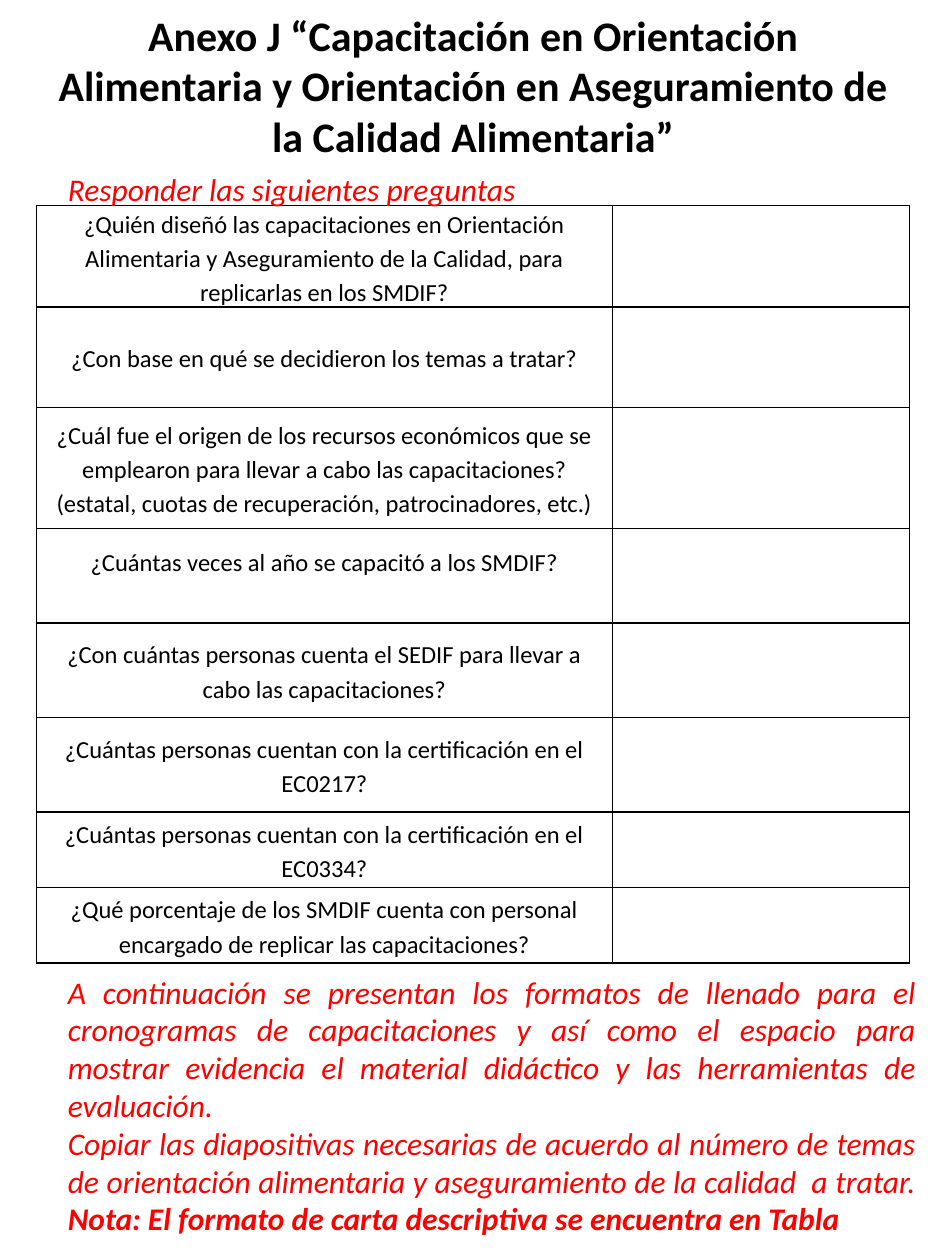
from dataclasses import dataclass

from lxml.etree import SubElement
from pptx import Presentation
from pptx.dml.color import RGBColor
from pptx.enum.text import MSO_ANCHOR, MSO_AUTO_SIZE, PP_ALIGN
from pptx.oxml.ns import qn
from pptx.util import Inches, Pt

COLORS = {"ink": "000000", "instruction": "FF0000"}
TITLE_FORMAT = {"name": "Calibri", "size": Pt(24), "bold": True}
INSTRUCTION_FORMAT = {"name": "Calibri", "size": Pt(18), "italic": True}
NOTE_FORMAT = {**INSTRUCTION_FORMAT, "bold": True}
QUESTION_FORMAT = {"name": "Calibri", "size": Pt(14), "bold": False}
COLUMN_WIDTHS = (4.57, 2.36)


@dataclass(frozen=True)
class Box:
    left: float
    top: float
    width: float
    height: float

    def lengths(self) -> tuple:
        return tuple(Inches(n) for n in (self.left, self.top, self.width, self.height))


@dataclass(frozen=True)
class Question:
    text: str
    height: float
    bottom_margin: float = 0


QUESTIONS = [
    Question("¿Quién diseñó las capacitaciones en Orientación Alimentaria y "
             "Aseguramiento de la Calidad, para replicarlas en los SMDIF?", 0.8),
    Question("¿Con base en qué se decidieron los temas a tratar?", 0.8),
    Question("¿Cuál fue el origen de los recursos económicos que se emplearon para "
             "llevar a cabo las capacitaciones? (estatal, cuotas de recuperación, "
             "patrocinadores, etc.)", 0.96),
    Question("¿Cuántas veces al año se capacitó a los SMDIF?", 0.75, 0.24),
    Question("¿Con cuántas personas cuenta el SEDIF para llevar a cabo las "
             "capacitaciones?", 0.75),
    Question("¿Cuántas personas cuentan con la certificación en el EC0217?", 0.75),
    Question("¿Cuántas personas cuentan con la certificación en el EC0334?", 0.6),
    Question("¿Qué porcentaje de los SMDIF cuenta con personal encargado de replicar "
             "las capacitaciones?", 0.6),
]

INTRODUCTION = [[("Responder las siguientes preguntas", INSTRUCTION_FORMAT)]]
CLOSING = [
    [("A continuación se presentan los formatos de llenado para el cronogramas de "
      "capacitaciones y así como el espacio para mostrar evidencia el material "
      "didáctico y las herramientas de evaluación.", INSTRUCTION_FORMAT)],
    [("Copiar las diapositivas necesarias de acuerdo al número de temas de orientación "
      "alimentaria y aseguramiento de la calidad  a tratar.", INSTRUCTION_FORMAT),
     (" Nota: El formato de carta descriptiva se encuentra en Tabla", NOTE_FORMAT)],
]


def add_run(paragraph, text: str, font_format: dict, color: str) -> None:
    run = paragraph.add_run()
    run.text = text
    for attribute, value in font_format.items():
        setattr(run.font, attribute, value)
    run.font.color.rgb = RGBColor.from_string(COLORS[color])


def add_title(slide, box: Box, text: str) -> None:
    title = slide.shapes.title
    title.left, title.top, title.width, title.height = box.lengths()
    frame = title.text_frame
    frame.auto_size = MSO_AUTO_SIZE.NONE
    frame.vertical_anchor = MSO_ANCHOR.MIDDLE
    paragraph = frame.paragraphs[0]
    paragraph.alignment = PP_ALIGN.CENTER
    add_run(paragraph, text, TITLE_FORMAT, "ink")


def add_instructions(slide, box: Box, paragraphs: list, alignment: PP_ALIGN) -> None:
    frame = slide.shapes.add_textbox(*box.lengths()).text_frame
    frame.word_wrap = True
    frame.auto_size = MSO_AUTO_SIZE.SHAPE_TO_FIT_TEXT
    for index, runs in enumerate(paragraphs):
        paragraph = frame.add_paragraph() if index else frame.paragraphs[0]
        paragraph.alignment = alignment
        for text, font_format in runs:
            add_run(paragraph, text, font_format, "instruction")


def style_cell(cell) -> None:
    properties = cell._tc.get_or_add_tcPr()
    for side in ("lnL", "lnR", "lnT", "lnB"):
        line = SubElement(properties, qn(f"a:{side}"), w=str(Pt(1)))
        fill = SubElement(line, qn("a:solidFill"))
        SubElement(fill, qn("a:srgbClr"), val=COLORS["ink"])
    cell.fill.background()
    cell.vertical_anchor = MSO_ANCHOR.MIDDLE
    cell.margin_left = cell.margin_right = Inches(0.07)
    cell.margin_top = cell.margin_bottom = 0


def add_question_table(slide, box: Box) -> None:
    table = slide.shapes.add_table(
        len(QUESTIONS), len(COLUMN_WIDTHS), *box.lengths()).table
    table.first_row = table.horz_banding = False
    for column, width in zip(table.columns, COLUMN_WIDTHS):
        column.width = Inches(width)
    for row, question in zip(table.rows, QUESTIONS):
        row.height = Inches(question.height)
        for cell in row.cells:
            style_cell(cell)
        question_cell = row.cells[0]
        question_cell.margin_bottom = Inches(question.bottom_margin)
        paragraph = question_cell.text_frame.paragraphs[0]
        paragraph.alignment = PP_ALIGN.CENTER
        paragraph.line_spacing = 1.15
        add_run(paragraph, question.text, QUESTION_FORMAT, "ink")


def main() -> None:
    presentation = Presentation()
    presentation.slide_width = Inches(7.5)
    presentation.slide_height = Inches(10)
    slide = presentation.slides.add_slide(presentation.slide_layouts[0])
    subtitle = slide.placeholders[1].element
    subtitle.getparent().remove(subtitle)

    add_title(slide, Box(0.29, 0.28, 6.93, 0.79),
              "Anexo J “Capacitación en Orientación Alimentaria y Orientación en "
              "Aseguramiento de la Calidad Alimentaria”")
    add_instructions(slide, Box(0.44, 7.67, 6.93, 2.22), CLOSING, PP_ALIGN.JUSTIFY)
    add_question_table(slide, Box(0.29, 1.63, 6.93, 6.01))
    add_instructions(slide, Box(0.44, 1.3, 4.65, 0.4), INTRODUCTION, PP_ALIGN.LEFT)
    presentation.save("out.pptx")


if __name__ == "__main__":
    main()
